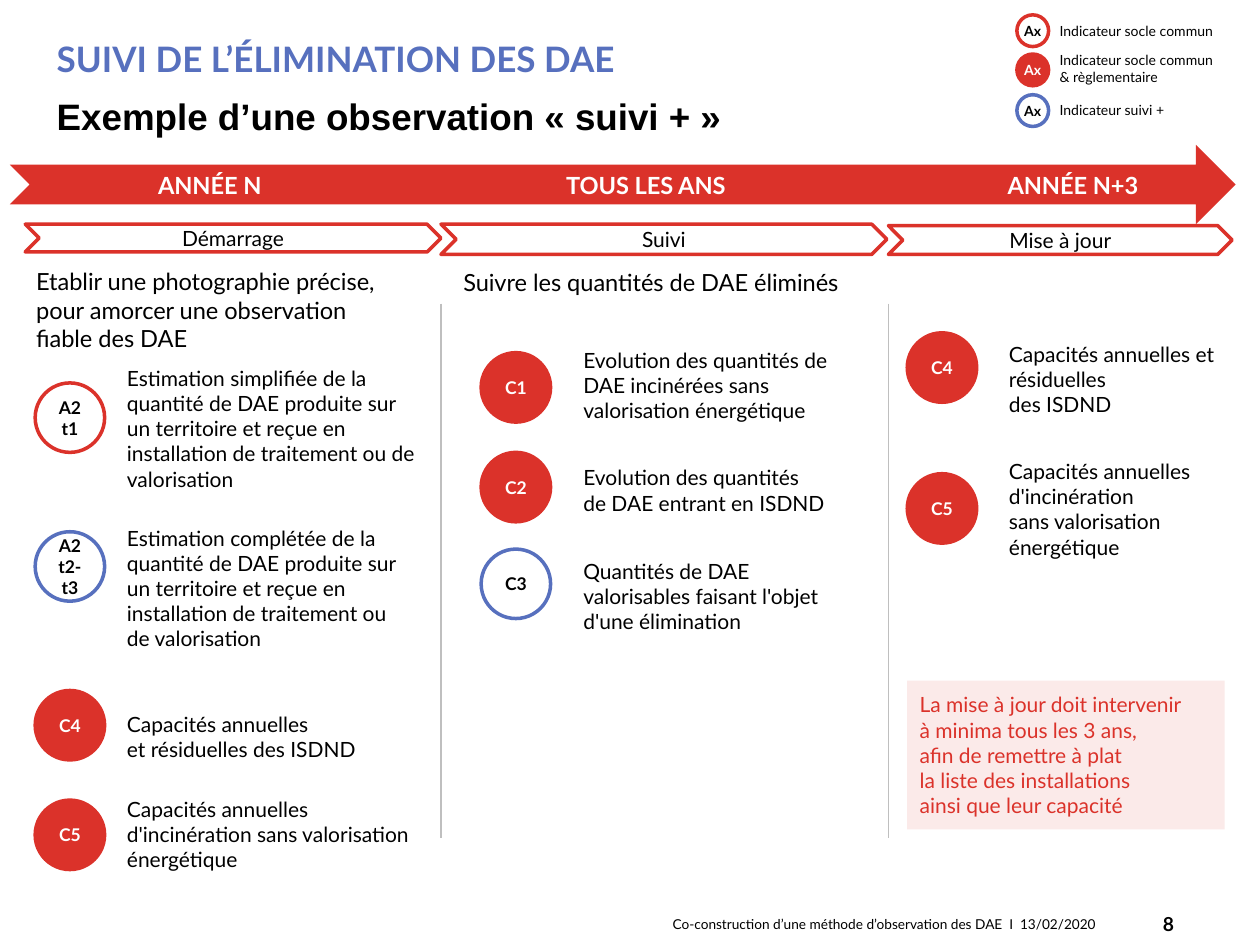
from typing import NamedTuple

from lxml import etree
from pptx import Presentation
from pptx import util as u
from pptx.dml.color import RGBColor
from pptx.enum import shapes, text
from pptx.oxml.ns import qn

C = {"red": "DB322A", "blue": "5770BE", "black": "000000", "white": "FFFFFF", "grey": "BFBFBF"}
SHAPE = shapes.MSO_SHAPE
LEFT, CENTER, RIGHT = text.PP_ALIGN.LEFT, text.PP_ALIGN.CENTER, text.PP_ALIGN.RIGHT
TOP, MIDDLE = text.MSO_ANCHOR.TOP, text.MSO_ANCHOR.MIDDLE


class Box(NamedTuple):
    x: float
    y: float
    w: float
    h: float


class Badge(NamedTuple):
    line: str
    fill: str | None
    ink: str


class Item(NamedTuple):
    code: str
    badge: Badge
    badge_y: float
    text_y: float
    w: float
    h: float
    label: str


class Column(NamedTuple):
    badge_x: float
    text_x: float
    items: list[Item]


class Phase(NamedTuple):
    period: str
    period_box: Box
    step: str
    step_box: Box


COMMON = Badge("red", None, "black")
REGULATED = Badge("red", "red", "white")
PLUS = Badge("blue", None, "black")

ESTIMATE = ("quantité de DAE produite sur un territoire et reçue en "
            "installation de traitement ou de valorisation")

PHASES = [
    Phase("ANNÉE N", Box(0.51, 3.33, 7.44, 0.84), "Démarrage", Box(0.51, 4.52, 8.38, 0.56)),
    Phase("TOUS LES ANS", Box(9.3, 3.33, 7.44, 0.84), "Suivi", Box(8.89, 4.52, 8.99, 0.61)),
    Phase("ANNÉE N+3", Box(18.67, 3.33, 5.92, 0.84), "Mise à jour", Box(17.91, 4.55, 6.93, 0.58)),
]

COLUMNS = [
    Column(0.71, 2.31, [
        Item("A2\nt1", COMMON, 7.72, 7.24, 6.32, 2.82, "Estimation simplifiée de la " + ESTIMATE),
        Item("A2\nt2-\nt3", PLUS, 10.72, 10.46, 6, 3.33, "Estimation complétée de la " + ESTIMATE),
        Item("C4", REGULATED, 13.92, 14.22, 6.32, 1.27,
             "Capacités annuelles\net résiduelles des ISDND"),
        Item("C5", REGULATED, 16.13, 15.93, 6.5, 1.8,
             "Capacités annuelles\nd'incinération sans valorisation énergétique"),
    ]),
    Column(9.7, 11.51, [
        Item("C1", REGULATED, 7.11, 6.88, 5.77, 1.8,
             "Evolution des quantités de DAE incinérées sans valorisation énergétique"),
        Item("C2", REGULATED, 9.12, 9.25, 6.2, 1.27,
             "Evolution des quantités\nde DAE entrant en ISDND"),
        Item("C3", PLUS, 11.07, 11.13, 5.44, 2.31,
             "Quantités de DAE valorisables faisant l'objet d'une élimination"),
    ]),
    Column(18.29, 20.09, [
        Item("C4", REGULATED, 6.71, 6.76, 4.95, 1.8,
             "Capacités annuelles et résiduelles\ndes ISDND"),
        Item("C5", REGULATED, 9.55, 9.12, 4.85, 2.31,
             "Capacités annuelles\nd'incinération\nsans valorisation énergétique"),
    ]),
]

LEGEND = Column(20.5, 21.11, [
    Item("Ax", COMMON, 0.3, 0.33, 4.1, 0.6, "Indicateur socle commun"),
    Item("Ax", REGULATED, 1.09, 0.91, 4.1, 0.94, "Indicateur socle commun\n& règlementaire"),
    Item("Ax", PLUS, 1.91, 1.93, 4.1, 0.6, "Indicateur suivi +"),
])


def rgb(name: str) -> RGBColor:
    return RGBColor.from_string(C[name])


def write(sp, paragraphs: list[str], size: float, color: str = "black", bold: bool = False,
          align=LEFT, anchor=MIDDLE, font: str = "Lato") -> None:
    tf = sp.text_frame
    tf.word_wrap = True
    tf.auto_size = text.MSO_AUTO_SIZE.NONE
    tf.vertical_anchor = anchor
    for i, words in enumerate(paragraphs):
        p = tf.add_paragraph() if i else tf.paragraphs[0]
        p.text = words
        p.alignment = align
        p.space_before = u.Pt(0)
        p.font.name, p.font.size, p.font.bold = font, u.Pt(size), bold
        p.font.color.rgb = rgb(color)


def place(sp, box: Box) -> None:
    sp.left, sp.top, sp.width, sp.height = map(u.Cm, box)


def add_text(s, box: Box, words: str, size: float, **style):
    sp = s.shapes.add_textbox(*map(u.Cm, box))
    write(sp, [words], size, **{"anchor": TOP, **style})
    return sp


def add_shape(s, kind, box: Box, fill: str | None = None, line: str | None = None):
    sp = s.shapes.add_shape(kind, *map(u.Cm, box))
    sp.shadow.inherit = False
    if fill:
        sp.fill.solid()
        sp.fill.fore_color.rgb = rgb(fill)
    else:
        sp.fill.background()
    if line:
        sp.line.color.rgb = rgb(line)
        sp.line.width = u.Pt(2)
    else:
        sp.line.fill.background()
    return sp


def add_column(s, column: Column, diameter: float, code_size: float, size: float) -> None:
    for it in column.items:
        sp = add_shape(s, SHAPE.OVAL, Box(column.badge_x, it.badge_y, diameter, diameter),
                       it.badge.fill, it.badge.line)
        tf = sp.text_frame
        tf.margin_left = tf.margin_right = tf.margin_top = tf.margin_bottom = 0
        write(sp, [it.code], code_size, it.badge.ink, bold=True, align=CENTER)
        add_text(s, Box(column.text_x, it.text_y, it.w, it.h), it.label, size)


def add_divider(s, x: float) -> None:
    cx = s.shapes.add_connector(shapes.MSO_CONNECTOR.STRAIGHT,
                                u.Cm(x), u.Cm(6.12), u.Cm(x), u.Cm(16.89))
    cx.line.color.rgb = rgb("grey")
    cx.line.width = u.Pt(0.75)
    etree.SubElement(cx._element.spPr, qn("a:effectLst"))


def add_note(s) -> None:
    sp = add_shape(s, SHAPE.RECTANGLE, Box(18.29, 13.72, 6.4, 3), "red")
    color = sp._element.spPr.find(qn("a:solidFill"))[0]
    etree.SubElement(color, qn("a:alpha"), val="10000")
    write(sp, ["La mise à jour doit intervenir",
               "à minima tous les 3 ans,\nafin de remettre à plat\n"
               "la liste des installations\nainsi que leur capacité"], 12, "red")


def main() -> None:
    prs = Presentation()
    prs.slide_width, prs.slide_height = u.Cm(25.4), u.Cm(19.05)
    s = prs.slides.add_slide(prs.slide_layouts[0])

    title, subtitle = s.placeholders
    place(title, Box(0.89, 0, 19.81, 2.34))
    write(title, ["SUIVI DE L’ÉLIMINATION DES DAE"], 20, "blue", bold=True)
    place(subtitle, Box(0.89, 1.93, 19.79, 0.79))
    write(subtitle, ["Exemple d’une observation «\u00a0suivi +\u00a0»"], 21, bold=True, font="Arial")

    add_shape(s, SHAPE.NOTCHED_RIGHT_ARROW, Box(0.2, 2.92, 24.71, 1.6), "red")
    for ph in PHASES:
        add_text(s, ph.period_box, ph.period, 13.5, color="white", bold=True, align=CENTER)
        step = add_shape(s, SHAPE.CHEVRON, ph.step_box, "white", "red")
        write(step, [ph.step], 12, align=CENTER)

    add_text(s, Box(0.48, 5.26, 7.57, 1.98),
             "Etablir une photographie précise, pour amorcer une observation fiable des DAE", 13.5)
    add_text(s, Box(9.09, 5.28, 10.21, 0.84), "Suivre les quantités de DAE éliminés", 13.5)

    for column in COLUMNS:
        add_column(s, column, 1.4, 10, 12)
    add_column(s, LEGEND, 0.64, 8, 8)
    for ph in PHASES[1:]:
        add_divider(s, ph.step_box.x)
    add_note(s)

    add_text(s, Box(13.31, 18.24, 10.97, 0.76),
             "Co-construction d’une méthode d’observation des DAE  I  13/02/2020", 7.8, anchor=MIDDLE)
    add_text(s, Box(22.5, 18.11, 1.42, 1.02), "8", 11, bold=True, align=RIGHT, anchor=MIDDLE)
    prs.save("out.pptx")


if __name__ == "__main__":
    main()
